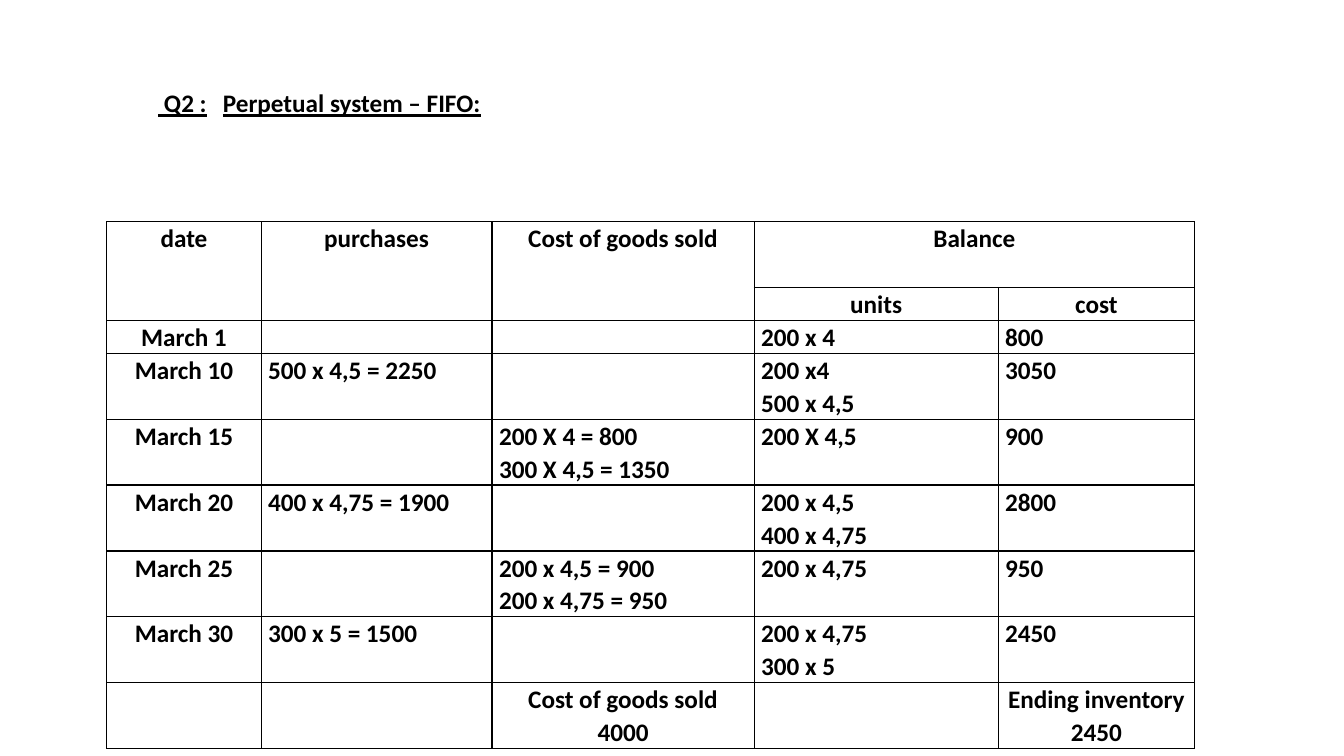
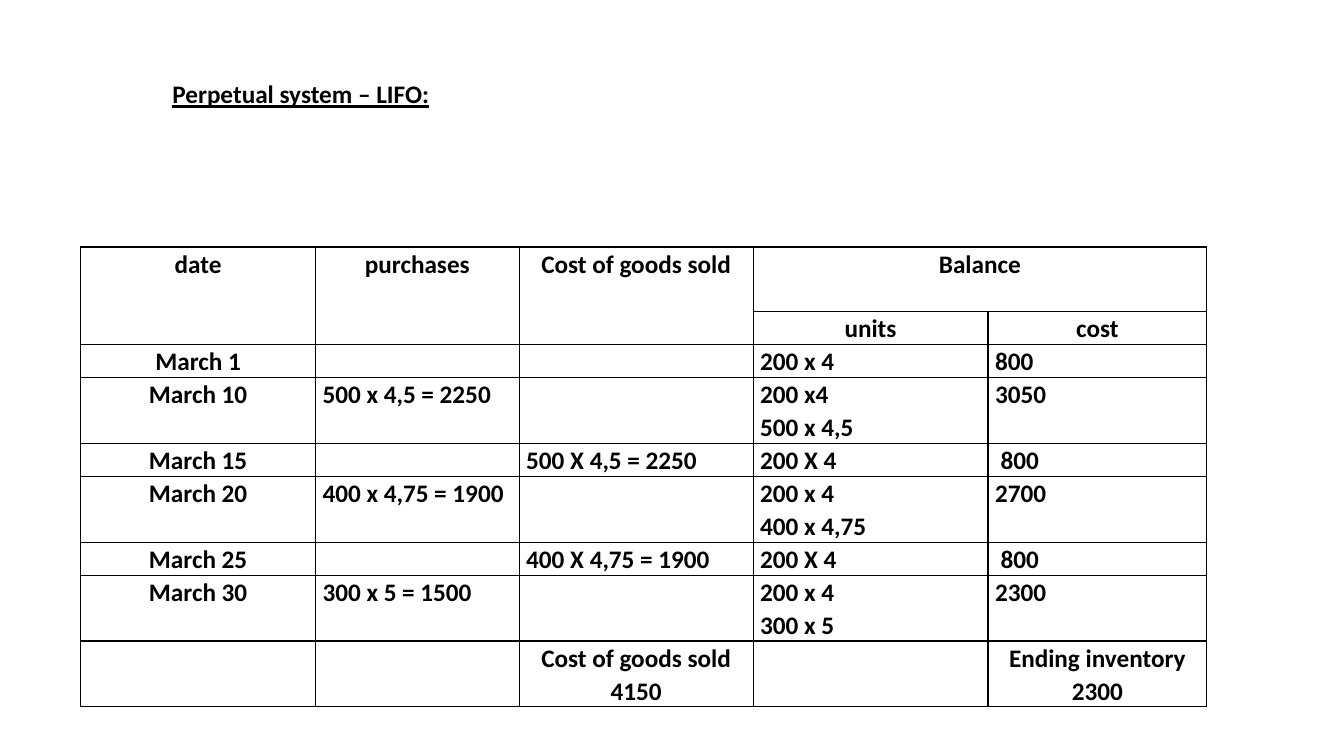
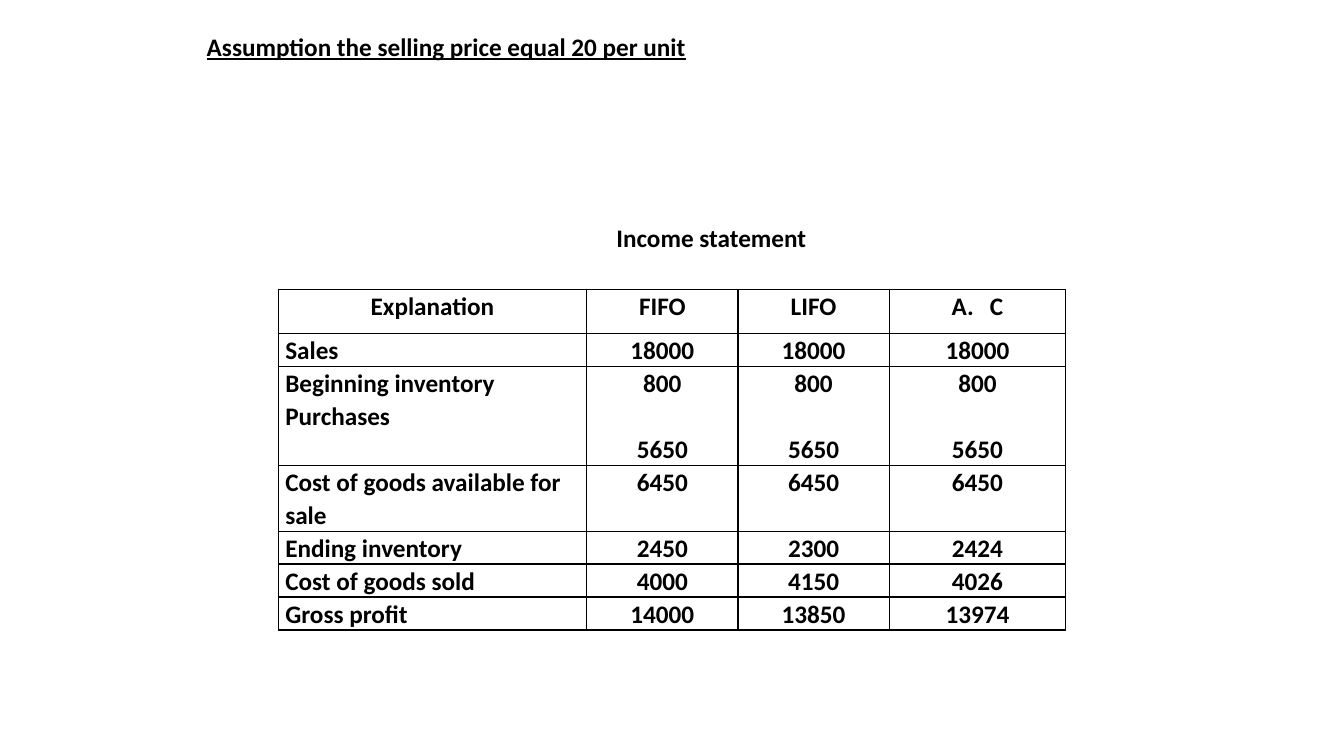
import pptx
import pptx.util
import pptx.dml.color
import pptx.enum.text
import pptx.oxml
import pptx.oxml.ns
import lxml.etree

Inches, Pt = pptx.util.Inches, pptx.util.Pt
ALIGN = pptx.enum.text.PP_ALIGN
COLORS = {"ink": "000000", "paper": "FFFFFF"}
FONT, SIZE, LEAD = "Calibri", 18, 1.07
GAP = 23.5  # height of one text line, in points

# Content: "\n" parts the paragraphs of a cell
HEADS = [
    ["date", "purchases", "Cost of goods sold", "Balance", ""],
    ["", "", "", "units", "cost"],
]
FIFO = HEADS + [
    ["March 1", "", "", "200 x 4", "800"],
    ["March 10", "500 x 4,5 = 2250", "", "200 x4\n500 x 4,5", "3050"],
    ["March 15", "", "200 X 4 = 800\n300 X 4,5 = 1350", "200 X 4,5", "900"],
    ["March 20", "400 x 4,75 = 1900", "", "200 x 4,5\n400 x 4,75", "2800"],
    ["March 25", "", "200 x 4,5 = 900\n200 x 4,75 = 950", "200 x 4,75", "950"],
    ["March 30", "300 x 5 = 1500", "", "200 x 4,75\n300 x 5", "2450"],
    ["", "", "Cost of goods sold\n4000", "", "Ending inventory\n2450"],
]
LIFO = HEADS + [
    ["March 1", "", "", "200 x 4", "800"],
    ["March 10", "500 x 4,5 = 2250", "", "200 x4\n500 x 4,5", "3050"],
    ["March 15", "", "500 X 4,5 = 2250", "200 X 4", " 800"],
    ["March 20", "400 x 4,75 = 1900", "", "200 x 4\n400 x 4,75", "2700"],
    ["March 25", "", "400 X 4,75 = 1900", "200 X 4", " 800"],
    ["March 30", "300 x 5 = 1500", "", "200 x 4\n300 x 5", "2300"],
    ["", "", "Cost of goods sold\n4150", "", "Ending inventory\n2300"],
]
INCOME = [
    ["Explanation", "FIFO", "LIFO", "C"],
    ["Sales", "18000", "18000", "18000"],
    ["Beginning inventory\nPurchases"] + ["800\n5650"] * 3,
    ["Cost of goods available for sale", "6450", "6450", "6450"],
    ["Ending inventory", "2450", "2300", "2424"],
    ["Cost of goods sold", "4000", "4150", "4026"],
    ["Gross profit", "14000", "13850", "13974"],
]
LEDGERS = [
    {"title": " Q2 :\tPerpetual system – FIFO:", "box": (1.47, 0.82, 5.2, 0.4),
     "lead": 1, "tab": 0.64, "rows": FIFO, "at": (1.06, 2.2), "tall": 5.22,
     "cols": (1.53, 2.29, 2.6, 2.42, 1.95)},
    {"title": "Perpetual system – LIFO:", "box": (1.61, 0.71, 5.56, 0.41),
     "lead": LEAD, "tab": None, "rows": LIFO, "at": (0.8, 2.45), "tall": 4.5,
     "cols": (2.33, 2.02, 2.32, 2.33, 2.17)},
]
LEDGER_LINES = (2, 1, 1, 2, 2, 2, 2, 2, 2), (2, 1, 1, 2, 1, 2, 1, 2, 2)
INCOME_LINES = (1, 3, 2, 1, 1, 1)


def add_xml(parent, xml):
    ns = pptx.oxml.ns.nsdecls("a")
    tag, rest = xml.split(" ", 1)
    parent.append(pptx.oxml.parse_xml(f"{tag} {ns} {rest}"))


def add_run(par, text, line=False):
    run = par.add_run()
    run.text = text
    font = run.font
    font.name, font.size, font.bold = FONT, Pt(SIZE), True
    font.underline = line
    font.color.rgb = pptx.dml.color.RGBColor.from_string(COLORS["ink"])


def set_text(shape, text, align, lead, line):
    frame = shape.text_frame
    frame.word_wrap = True
    frame.auto_size = pptx.enum.text.MSO_AUTO_SIZE.NONE
    frame.vertical_anchor = pptx.enum.text.MSO_ANCHOR.TOP
    par = frame.paragraphs[0]
    par.alignment, par.line_spacing = align, lead
    add_run(par, text, line)
    return par


def add_title(deck, text, box, lead=LEAD):
    slide = deck.slides.add_slide(deck.slide_layouts[5])
    title = slide.shapes.title
    title.left, title.top, title.width, title.height = map(Inches, box)
    return slide, set_text(title, text, ALIGN.LEFT, lead, True)


def set_cell(cell, text, mid, gap):
    cell.margin_left = cell.margin_right = Inches(0.07)
    cell.margin_top = cell.margin_bottom = 0
    props = cell._tc.get_or_add_tcPr()
    for side in "LRTB":
        add_xml(props, f'<a:ln{side} w="12700"><a:solidFill><a:srgbClr val='
                       f'"{COLORS["ink"]}"/></a:solidFill></a:ln{side}>')
    cell.fill.solid()
    cell.fill.fore_color.rgb = pptx.dml.color.RGBColor.from_string(COLORS["paper"])
    frame = cell.text_frame
    for i, part in enumerate(text.split("\n") if text else []):
        par = frame.add_paragraph() if i else frame.paragraphs[0]
        par.alignment = ALIGN.CENTER if mid else ALIGN.LEFT
        par.line_spacing = LEAD
        if i and gap:
            par.space_before = Pt(gap)
        add_run(par, part)


def add_grid(slide, rows, at, cols, highs, is_mid, gap_at=None):
    left, top = at
    table = slide.shapes.add_table(
        len(rows), len(cols), Inches(left), Inches(top),
        Inches(sum(cols)), Inches(sum(highs))).table
    table.first_row = table.horz_banding = False
    for col, wide in zip(table.columns, cols):
        col.width = Inches(wide)
    for r, (row, high) in enumerate(zip(rows, highs)):
        table.rows[r].height = Inches(high)
        for c, text in enumerate(row):
            gap = GAP if r == gap_at and c else 0
            set_cell(table.cell(r, c), text, is_mid(r, c), gap)
    return table


def add_ledger(deck, data, lines):
    slide, par = add_title(deck, data["title"], data["box"], data["lead"])
    if data["tab"]:
        add_xml(par._p.get_or_add_pPr(), '<a:tabLst ><a:tab algn="l" pos='
                f'"{Inches(data["tab"])}"/></a:tabLst>')
    unit = data["tall"] / sum(lines)
    last = len(lines) - 1
    table = add_grid(slide, data["rows"], data["at"], data["cols"],
                     [n * unit for n in lines],
                     lambda r, c: r < 2 or r == last or c == 0)
    for c in range(3):
        table.cell(0, c).merge(table.cell(1, c))
    table.cell(0, 3).merge(table.cell(0, 4))


def add_income(deck):
    slide, _ = add_title(deck, "Assumption the selling price equal 20 per unit",
                         (1.95, 0.24, 9.55, 0.41))
    unit = 2.89 / sum(INCOME_LINES)
    table = add_grid(slide, INCOME, (2.76, 2.87), (3.06, 1.5, 1.5, 1.75),
                     [0.44] + [n * unit for n in INCOME_LINES],
                     lambda r, c: r == 0 or c > 0, gap_at=2)
    # Lettered heading of the last column
    props = table.cell(0, 3).text_frame.paragraphs[0]._p.get_or_add_pPr()
    props.set("marL", str(Inches(0.38)))
    props.set("indent", str(-Inches(0.38)))
    add_xml(props, '<a:buFont typeface="+mj-lt"/>')
    add_xml(props, '<a:buAutoNum type="alphaUcPeriod"/>')
    label = slide.shapes.add_textbox(*map(Inches, (5.61, 2.14, 2.89, 0.41)))
    set_text(label, "Income statement", ALIGN.CENTER, LEAD, False)


def main():
    deck = pptx.Presentation()
    deck.slide_width, deck.slide_height = Inches(13.33), Inches(7.5)
    for data, lines in zip(LEDGERS, LEDGER_LINES):
        add_ledger(deck, data, lines)
    add_income(deck)
    deck.save("out.pptx")


if __name__ == "__main__":
    main()
